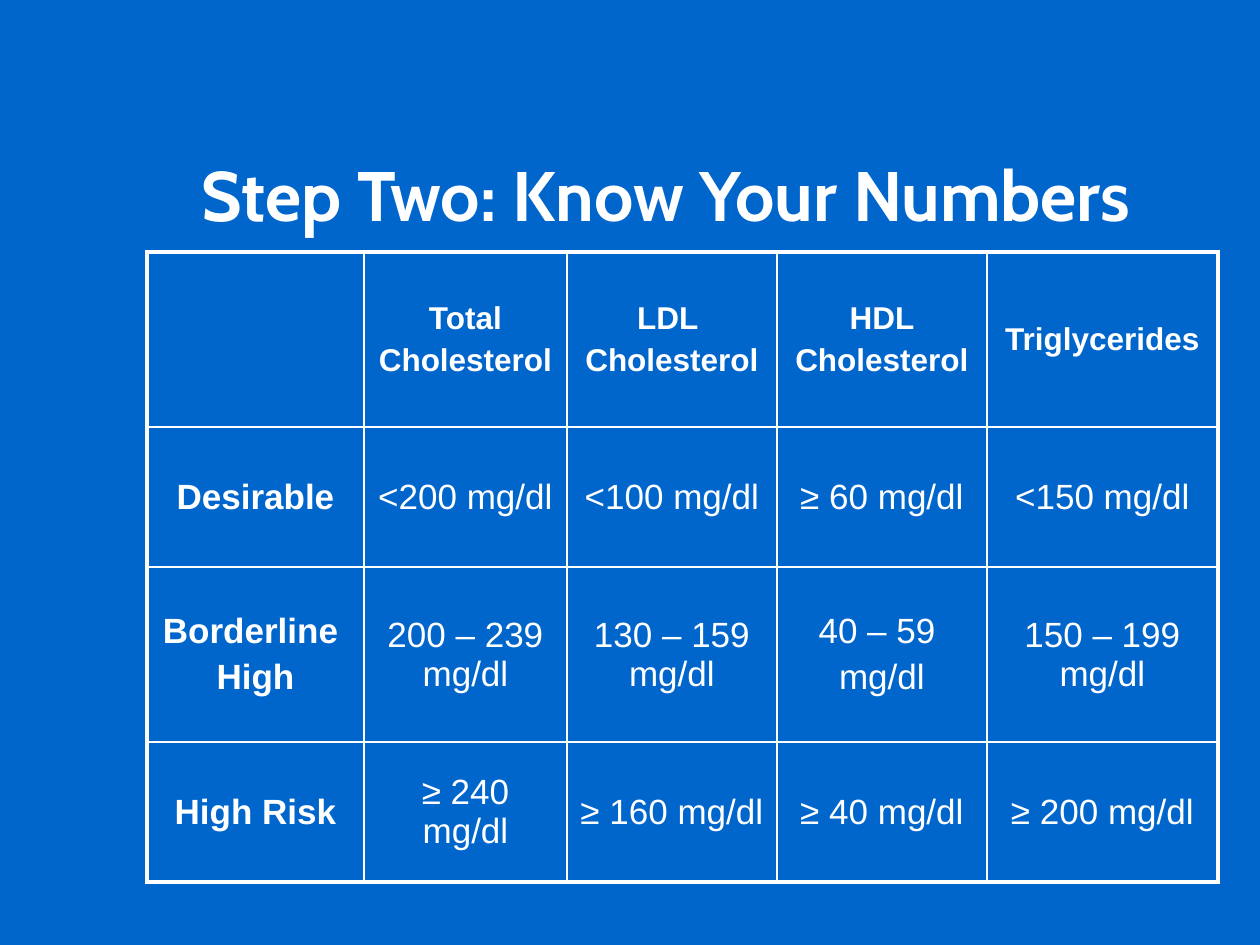
from lxml import etree
from pptx import Presentation
from pptx.dml.color import RGBColor
from pptx.enum.text import MSO_ANCHOR, PP_ALIGN
from pptx.oxml.ns import qn
from pptx.util import Pt

MIDDLE, BOTTOM = MSO_ANCHOR.MIDDLE, MSO_ANCHOR.BOTTOM
LEFT, CENTER = PP_ALIGN.LEFT, PP_ALIGN.CENTER
BLUE, WHITE = "0066CC", "FFFFFF"
THIN, THICK = 1, 2.25
TITLE_ONLY = 5

COLUMN_WIDTHS = [124, 116, 120, 120, 132]
ROW_HEIGHTS = [100, 80, 100, 80]
LEVELS = [
    ["", "Total\nCholesterol", "LDL \nCholesterol", "HDL\nCholesterol", "Triglycerides"],
    ["Desirable", "<200 mg/dl", "<100 mg/dl", "≥ 60 mg/dl", "<150 mg/dl"],
    ["Borderline \nHigh", "200 – 239 mg/dl", "130 – 159 mg/dl", "40 – 59 \nmg/dl",
     "150 – 199 mg/dl"],
    ["High Risk", "≥ 240 mg/dl", "≥ 160 mg/dl", "≥ 40 mg/dl", "≥ 200 mg/dl"],
]


def color(hex_code):
    """Turn a hex string into a colour."""
    return RGBColor.from_string(hex_code)


def format_text(frame, font_name, size, bold, alignment):
    """Format every paragraph of a text frame alike."""
    for index, paragraph in enumerate(frame.paragraphs):
        paragraph.alignment = alignment
        paragraph.space_before = Pt(0.2 * size if index else 0)
        for run in paragraph.runs:
            run.font.name = font_name
            run.font.size = Pt(size)
            run.font.bold = bold
            run.font.color.rgb = color(WHITE)


def add_title(slide, text):
    """Place and format the slide title."""
    title = slide.shapes.title
    title.left, title.top, title.width, title.height = Pt(108), Pt(48), Pt(648), Pt(90)
    frame = title.text_frame
    frame.text = text
    frame.word_wrap = True
    frame.vertical_anchor = BOTTOM
    format_text(frame, "Cabin", 40, True, LEFT)


def set_borders(cell, widths):
    """Draw the left, right, top and bottom borders of a cell."""
    properties = cell._tc.get_or_add_tcPr()
    for position, (side, width) in enumerate(zip("LRTB", widths)):
        border = etree.Element(qn(f"a:ln{side}"), w=str(Pt(width)))
        fill = etree.SubElement(border, qn("a:solidFill"))
        etree.SubElement(fill, qn("a:srgbClr"), val=WHITE)
        properties.insert(position, border)


def add_levels_table(slide):
    """Add the table of cholesterol levels."""
    last_row, last_column = len(ROW_HEIGHTS) - 1, len(COLUMN_WIDTHS) - 1
    table = slide.shapes.add_table(
        len(ROW_HEIGHTS), len(COLUMN_WIDTHS), Pt(84), Pt(144),
        Pt(sum(COLUMN_WIDTHS)), Pt(sum(ROW_HEIGHTS))).table
    table.first_row = table.horz_banding = False
    for column, width in zip(table.columns, COLUMN_WIDTHS):
        column.width = Pt(width)
    for r, (height, levels) in enumerate(zip(ROW_HEIGHTS, LEVELS)):
        table.rows[r].height = Pt(height)
        for c, level in enumerate(levels):
            cell = table.cell(r, c)
            cell.fill.background()
            cell.vertical_anchor = MIDDLE
            cell.text_frame.text = level
            format_text(cell.text_frame, "Arial", 20 if r else 18, r == 0 or c == 0, CENTER)
            outer_sides = (c == 0, c == last_column, r == 0, r == last_row)
            set_borders(cell, [THICK if outer else THIN for outer in outer_sides])


def main():
    """Build and save the slide."""
    presentation = Presentation()
    presentation.slide_width, presentation.slide_height = Pt(720), Pt(540)
    slide = presentation.slides.add_slide(presentation.slide_layouts[TITLE_ONLY])
    slide.background.fill.solid()
    slide.background.fill.fore_color.rgb = color(BLUE)
    add_title(slide, "Step Two: Know Your Numbers")
    add_levels_table(slide)
    presentation.save("out.pptx")


if __name__ == "__main__":
    main()
